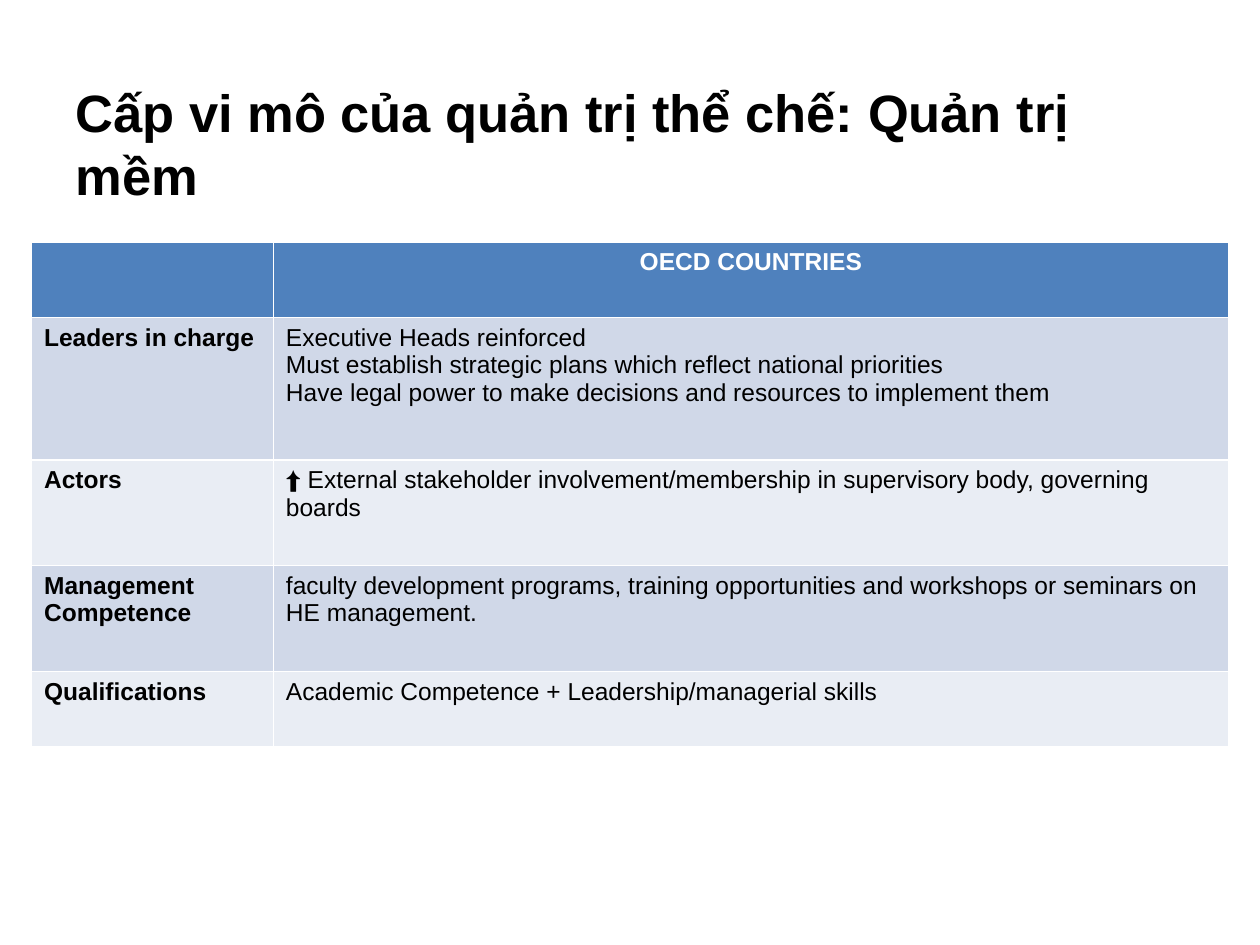
from pptx import Presentation
from pptx.dml.color import RGBColor
from pptx.enum.text import MSO_ANCHOR, PP_ALIGN
from pptx.util import Inches, Pt

BLACK = RGBColor(0x00, 0x00, 0x00)
WHITE = RGBColor(0xFF, 0xFF, 0xFF)
HEADER_BLUE = RGBColor(0x4F, 0x81, 0xBD)
BANDS = (RGBColor(0xD0, 0xD8, 0xE8), RGBColor(0xE9, 0xED, 0xF4))
FONT = "Arial"

TITLE = "Cấp vi mô của quản trị thể chế: Quản trị mềm"
COLUMN_WIDTHS = (1.92, 7.58)
ROW_HEIGHTS = (0.6, 1.13, 0.84, 0.84, 0.6)
# Each row: label, then the lines of its description
ROWS = (
    ("", ("OECD COUNTRIES",)),
    ("Leaders in charge", (
        "Executive Heads reinforced",
        "Must establish strategic plans which reflect national priorities",
        "Have legal power to make decisions and resources to implement them")),
    ("Actors", (
        "⬆ External stakeholder involvement/membership in supervisory body, "
        "governing boards",)),
    ("Management Competence", (
        "faculty development programs, training opportunities and workshops "
        "or seminars on HE management.",)),
    ("Qualifications", ("Academic Competence + Leadership/managerial skills",)),
)


def write_lines(frame, lines, size, color, bold, align=PP_ALIGN.LEFT):
    for index, line in enumerate(lines):
        para = frame.add_paragraph() if index else frame.paragraphs[0]
        para.alignment = align
        if not line:
            para.font.size = Pt(size)
            continue
        span = para.add_run()
        span.text = line
        span.font.name = FONT
        span.font.size = Pt(size)
        span.font.bold = bold
        span.font.color.rgb = color


def place_title(page, left, top, width, height):
    title = page.shapes.title
    title.left, title.top = Inches(left), Inches(top)
    title.width, title.height = Inches(width), Inches(height)
    title.text_frame.vertical_anchor = MSO_ANCHOR.MIDDLE
    write_lines(title.text_frame, (TITLE,), 30, BLACK, True)


def place_table(page, left, top):
    table = page.shapes.add_table(
        len(ROWS), len(COLUMN_WIDTHS), Inches(left), Inches(top),
        Inches(sum(COLUMN_WIDTHS)), Inches(sum(ROW_HEIGHTS))).table
    for column, width in zip(table.columns, COLUMN_WIDTHS):
        column.width = Inches(width)
    for index, (label, lines) in enumerate(ROWS):
        table.rows[index].height = Inches(ROW_HEIGHTS[index])
        header = index == 0
        fill = HEADER_BLUE if header else BANDS[(index - 1) % 2]
        color = WHITE if header else BLACK
        align = PP_ALIGN.CENTER if header else PP_ALIGN.LEFT
        label_cell, text_cell = table.cell(index, 0), table.cell(index, 1)
        for cell in (label_cell, text_cell):
            cell.fill.solid()
            cell.fill.fore_color.rgb = fill
        write_lines(label_cell.text_frame, (label,), 14, color, True)
        write_lines(text_cell.text_frame, lines, 14, color, header, align)


def main():
    deck = Presentation()
    deck.slide_width, deck.slide_height = Inches(10), Inches(7.5)
    page = deck.slides.add_slide(deck.slide_layouts[5])  # title only
    place_title(page, 0.5, 0.52, 9, 1.23)
    place_table(page, 0.25, 1.92)
    deck.save("out.pptx")


if __name__ == "__main__":
    main()
